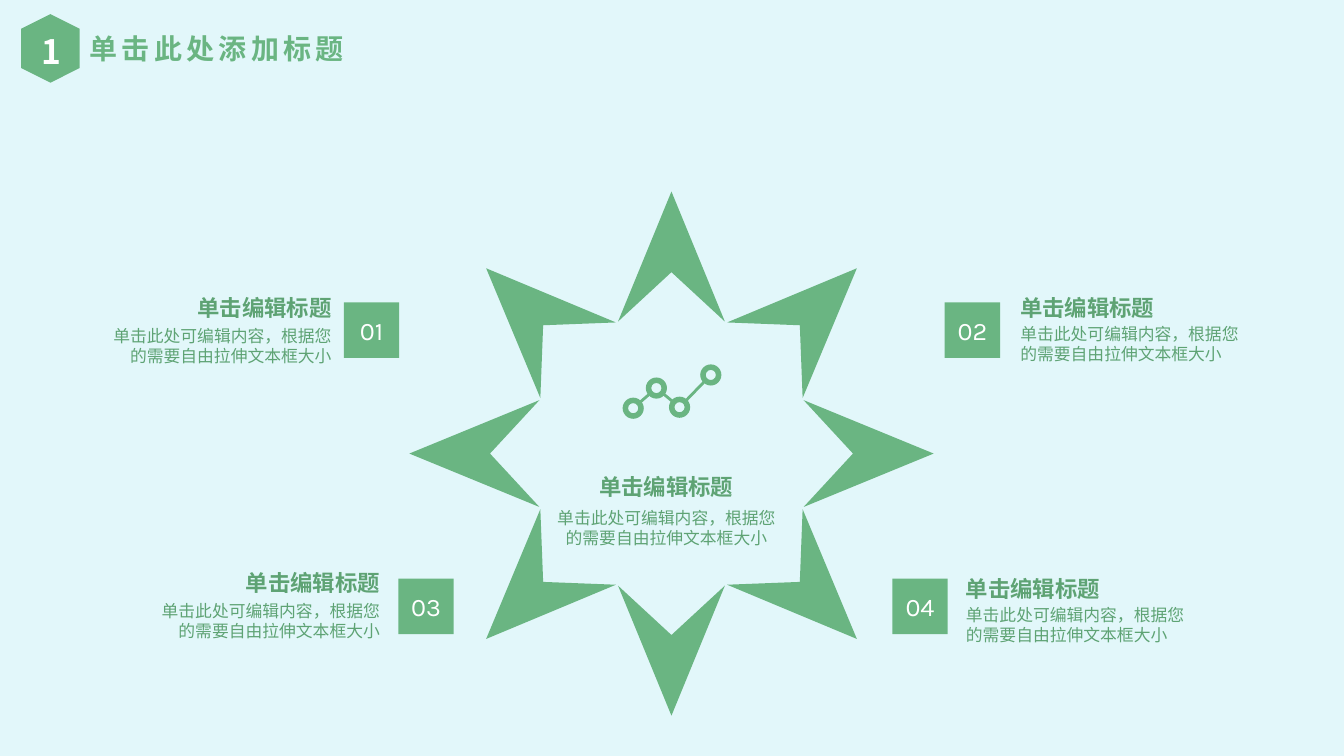
import math
from dataclasses import dataclass

import pptx
import pptx.dml.color
import pptx.enum.shapes
import pptx.enum.text
import pptx.oxml
import pptx.oxml.ns
import pptx.util
from pptx.shapes.base import BaseShape
from pptx.slide import Slide
from pptx.text.text import TextFrame

Inches = pptx.util.Inches
Align = pptx.enum.text.PP_ALIGN
Preset = pptx.enum.shapes.MSO_SHAPE

COLORS = {"background": "E2F7FA", "green": "6AB582", "text": "5EA374", "white": "FFFFFF"}
HEADING = "单击编辑标题"
DETAIL = "单击此处可编辑内容，根据您的需要自由拉伸文本框大小"
HEADING_WIDTH, DETAIL_WIDTH = 2.56, 2.21
BADGE_SIZE = 0.55

# Star: one spike pointing up, given relative to the star's centre
STAR_CENTER = (6.66, 4.5)
SPIKE = [(0, -2.6), (0.53, -1.31), (0, -1.8), (-0.53, -1.31)]
SPIKE_COUNT = 8

# Line icon: ring centres from left to right
RING_CENTERS = [(6.28, 4.05), (6.51, 3.85), (6.74, 4.04), (7.05, 3.72)]
RING_RADIUS = 0.105
RING_BAND = 0.26


@dataclass(frozen=True)
class TextStyle:
    size: float
    font: str
    color: str
    bold: bool = False
    letter_spacing: float = 0
    space_before: float = 0


@dataclass(frozen=True)
class Caption:
    anchor: float  # left edge, middle or right edge, following the alignment
    top: float
    detail_gap: float
    align: Align


@dataclass(frozen=True)
class Badge:
    label: str
    left: float
    top: float


NUMBER_STYLE = TextStyle(24, "Noto Sans CJK SC", "white", bold=True)
TITLE_STYLE = TextStyle(20, "Noto Sans CJK SC", "green", bold=True, letter_spacing=3)
BADGE_STYLE = TextStyle(18, "Karla", "white")
HEADING_STYLE = TextStyle(16, "Arial", "text", bold=True, space_before=3.2)
DETAIL_STYLE = TextStyle(12, "Arial", "text", space_before=2.4)

CAPTIONS = [
    Caption(6.61, 4.69, 0.35, Align.CENTER),
    Caption(3.29, 2.92, 0.31, Align.RIGHT),
    Caption(3.77, 5.65, 0.31, Align.RIGHT),
    Caption(10.12, 2.92, 0.29, Align.LEFT),
    Caption(9.58, 5.71, 0.29, Align.LEFT),
]
BADGES = [
    Badge("01", 3.41, 3),
    Badge("02", 9.37, 3),
    Badge("03", 3.95, 5.74),
    Badge("04", 8.85, 5.74),
]


def rgb(name: str) -> pptx.dml.color.RGBColor:
    return pptx.dml.color.RGBColor.from_string(COLORS[name])


def paint(shape: BaseShape) -> None:
    shape.shadow.inherit = False
    shape.fill.solid()
    shape.fill.fore_color.rgb = rgb("green")
    shape.line.fill.background()


def write(frame: TextFrame, text: str, style: TextStyle, align: Align, inset: bool = False) -> None:
    frame.word_wrap = True
    if not inset:
        frame.margin_left = frame.margin_right = frame.margin_top = frame.margin_bottom = 0
    para = frame.paragraphs[0]
    para.alignment = align
    para.space_before = pptx.util.Pt(style.space_before)
    span = para.add_run()
    span.text = text
    span.font.size = pptx.util.Pt(style.size)
    span.font.name = style.font
    span.font.bold = style.bold
    span.font.color.rgb = rgb(style.color)
    # East Asian font and letter spacing
    properties = span.font._element
    east_asian = pptx.oxml.parse_xml(f'<a:ea {pptx.oxml.ns.nsdecls("a")} typeface="{style.font}"/>')
    properties.find(pptx.oxml.ns.qn("a:latin")).addnext(east_asian)
    if style.letter_spacing:
        properties.set("spc", str(int(style.letter_spacing * 100)))


def add_text(page: Slide, left: float, top: float, width: float, height: float,
             text: str, style: TextStyle, align: Align, inset: bool = False) -> None:
    box = page.shapes.add_textbox(Inches(left), Inches(top), Inches(width), Inches(height))
    box.text_frame.auto_size = pptx.enum.text.MSO_AUTO_SIZE.SHAPE_TO_FIT_TEXT
    write(box.text_frame, text, style, align, inset)


def add_header(page: Slide) -> None:
    hexagon = page.shapes.add_shape(Preset.HEXAGON, Inches(0.16), Inches(0.19), Inches(0.68), Inches(0.58))
    hexagon.rotation = 90
    paint(hexagon)
    add_text(page, 0.31, 0.26, 0.39, 0.5, "1", NUMBER_STYLE, Align.CENTER, inset=True)
    title = page.shapes.title
    title.left, title.top = Inches(0.79), Inches(0.26)
    title.width, title.height = Inches(3.01), Inches(0.44)
    title.text_frame.vertical_anchor = pptx.enum.text.MSO_ANCHOR.TOP
    title.text_frame.auto_size = pptx.enum.text.MSO_AUTO_SIZE.SHAPE_TO_FIT_TEXT
    write(title.text_frame, "单击此处添加标题", TITLE_STYLE, Align.LEFT, inset=True)


def add_spike(page: Slide, angle: float) -> None:
    cosine, sine = math.cos(angle), math.sin(angle)
    center_x, center_y = STAR_CENTER
    points = [(Inches(center_x + x * cosine - y * sine), Inches(center_y + x * sine + y * cosine))
              for x, y in SPIKE]
    builder = page.shapes.build_freeform(*points[0])
    builder.add_line_segments(points[1:], close=True)
    paint(builder.convert_to_shape())


def add_icon(page: Slide) -> None:
    # Links run from ring edge to ring edge
    for (x1, y1), (x2, y2) in zip(RING_CENTERS, RING_CENTERS[1:]):
        share = 0.9 * RING_RADIUS / math.hypot(x2 - x1, y2 - y1)
        dx, dy = (x2 - x1) * share, (y2 - y1) * share
        link = page.shapes.add_connector(
            pptx.enum.shapes.MSO_CONNECTOR.STRAIGHT,
            Inches(x1 + dx), Inches(y1 + dy), Inches(x2 - dx), Inches(y2 - dy))
        link.line.color.rgb = rgb("green")
        link.line.width = pptx.util.Pt(2)
        link._element.spPr.append(pptx.oxml.parse_xml(f'<a:effectLst {pptx.oxml.ns.nsdecls("a")}/>'))
    for x, y in RING_CENTERS:
        ring = page.shapes.add_shape(Preset.DONUT, Inches(x - RING_RADIUS), Inches(y - RING_RADIUS),
                                     Inches(2 * RING_RADIUS), Inches(2 * RING_RADIUS))
        ring.adjustments[0] = RING_BAND
        paint(ring)


def add_badge(page: Slide, badge: Badge) -> None:
    square = page.shapes.add_shape(Preset.RECTANGLE, Inches(badge.left), Inches(badge.top),
                                   Inches(BADGE_SIZE), Inches(BADGE_SIZE))
    paint(square)
    square.text_frame.vertical_anchor = pptx.enum.text.MSO_ANCHOR.MIDDLE
    write(square.text_frame, badge.label, BADGE_STYLE, Align.CENTER)


def add_caption(page: Slide, caption: Caption) -> None:
    shift = {Align.LEFT: 0, Align.CENTER: 0.5, Align.RIGHT: 1}[caption.align]
    add_text(page, caption.anchor - shift * HEADING_WIDTH, caption.top,
             HEADING_WIDTH, 0.27, HEADING, HEADING_STYLE, caption.align)
    add_text(page, caption.anchor - shift * DETAIL_WIDTH, caption.top + caption.detail_gap,
             DETAIL_WIDTH, 0.4, DETAIL, DETAIL_STYLE, caption.align)


def main() -> None:
    deck = pptx.Presentation()
    deck.slide_width, deck.slide_height = Inches(13.33), Inches(7.5)
    page = deck.slides.add_slide(deck.slide_layouts[5])
    page.background.fill.solid()
    page.background.fill.fore_color.rgb = rgb("background")

    add_header(page)
    for index in range(SPIKE_COUNT):
        add_spike(page, index * math.tau / SPIKE_COUNT)
    add_icon(page)
    for badge in BADGES:
        add_badge(page, badge)
    for caption in CAPTIONS:
        add_caption(page, caption)

    deck.save("out.pptx")


if __name__ == "__main__":
    main()
